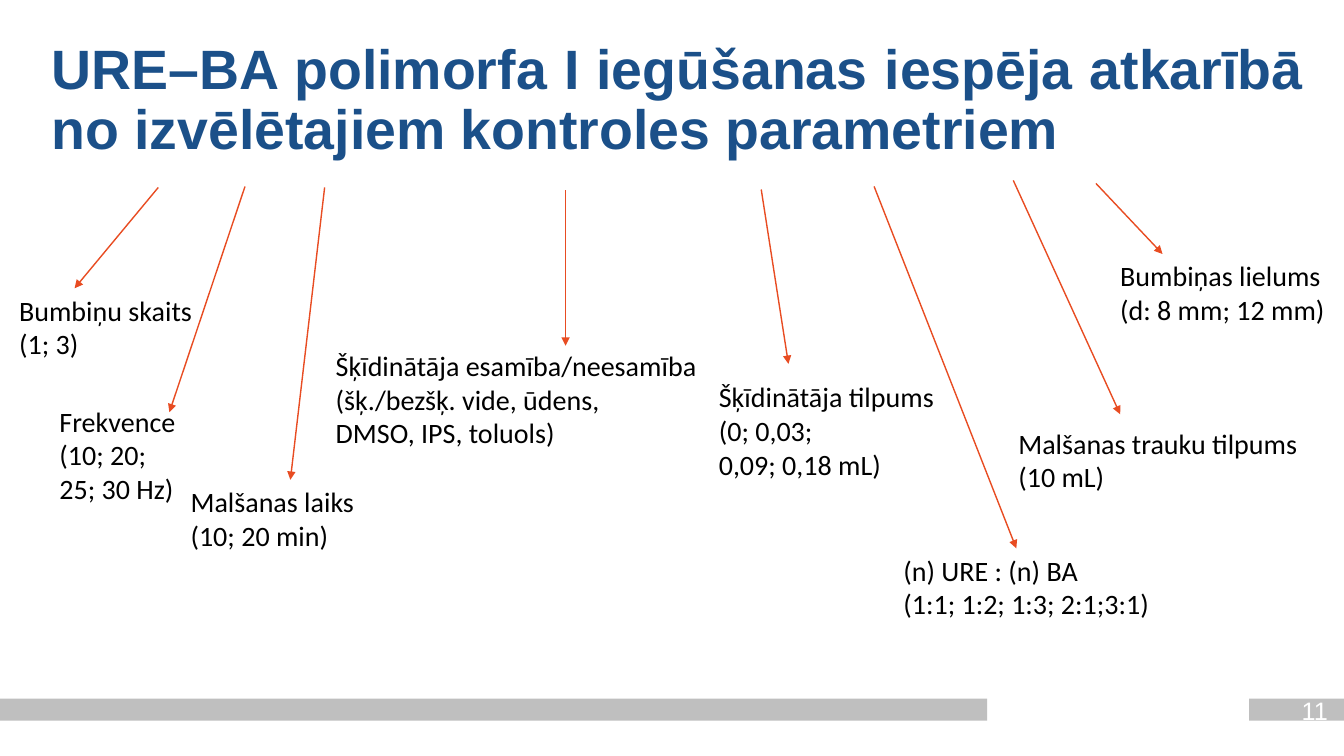
"""Build a slide of the parameters that control how polymorph I is obtained."""
from lxml import etree
from pptx import Presentation
from pptx.dml.color import RGBColor
from pptx.enum.shapes import MSO_CONNECTOR, MSO_SHAPE
from pptx.enum.text import MSO_ANCHOR, MSO_AUTO_SIZE, PP_ALIGN
from pptx.oxml.ns import qn
from pptx.util import Pt

EMU_PER_PX = 9144
STRAIGHT = MSO_CONNECTOR.STRAIGHT
RECTANGLE = MSO_SHAPE.RECTANGLE
MIDDLE = MSO_ANCHOR.MIDDLE
TOP = MSO_ANCHOR.TOP
GROW = MSO_AUTO_SIZE.SHAPE_TO_FIT_TEXT
LEFT = PP_ALIGN.LEFT
CENTER = PP_ALIGN.CENTER
JUSTIFY = PP_ALIGN.JUSTIFY

TITLE = "URE–BA polimorfa I iegūšanas iespēja atkarībā no izvēlētajiem kontroles parametriem"
BLUE, ORANGE, GRAY, BLACK, WHITE = "1B5089", "E84C22", "BFBFBF", "000000", "FFFFFF"

FOOTER_BARS = [(0, 979), (1239, 94)]

PARAMETERS = [
    ((14, 286, 184, 77), "Bumbiņu skaits\n(1; 3)", (157, 186), (74, 286)),
    ((54, 396, 127, 111), "Frekvence\n(10; 20;\n25; 30 Hz)", (243, 185), (168, 409)),
    ((184, 476, 175, 77), "Malšanas laiks\n(10; 20 min)", (322, 186), (288, 476)),
    ((328, 341, 372, 111),
     "Šķīdinātāja esamība/neesamība\n(šķ./bezšķ. vide, ūdens,\nDMSO, IPS, toluols)",
     (561, 189), (561, 343)),
    ((708, 372, 227, 111), "Šķīdinātāja tilpums\n(0; 0,03;\n0,09; 0,18 mL)",
     (755, 188), (782, 361)),
    ((891, 544, 258, 77), "(n) URE : (n) BA\n(1:1; 1:2; 1:3; 2:1;3:1)",
     (867, 185), (1008, 544)),
    ((1005, 418, 291, 77), "Malšanas trauku tilpums\n(10 mL)", (1005, 179), (1111, 411)),
    ((1106, 252, 215, 77), "Bumbiņas lielums\n(d: 8 mm; 12 mm)", (1087, 182), (1153, 252)),
]


def px(*lengths):
    """Turn pixel lengths into a list of EMU lengths."""
    return [length * EMU_PER_PX for length in lengths]


def color(hex_code):
    """Return the colour of a hex string."""
    return RGBColor.from_string(hex_code)


def write_text(shape, text, font_name, size, hex_code, bold=False,
               alignment=LEFT, anchor=TOP, wrap=False):
    """Fill a shape with text in one format."""
    frame = shape.text_frame
    frame.text = text
    frame.word_wrap = wrap
    frame.vertical_anchor = anchor
    inset = px(5)[0]
    frame.margin_left = frame.margin_right = inset
    frame.margin_top = frame.margin_bottom = inset
    for paragraph in frame.paragraphs:
        paragraph.alignment = alignment
        for run in paragraph.runs:
            run.font.name = font_name
            run.font.size = Pt(size)
            run.font.bold = bold
            run.font.color.rgb = color(hex_code)


def add_title(slide):
    """Place and format the title."""
    title = slide.shapes.title
    title.left, title.top, title.width, title.height = px(46, 57, 1252, 87)
    write_text(title, TITLE, "Arial", 39.6, BLUE, bold=True,
               alignment=JUSTIFY, anchor=MIDDLE, wrap=True)
    title.text_frame.paragraphs[0].line_spacing = 0.9


def add_bar(slide, left, width):
    """Draw one gray bar of the footer."""
    bar = slide.shapes.add_shape(RECTANGLE, *px(left, 693, width, 22))
    bar.shadow.inherit = False
    bar.fill.solid()
    bar.fill.fore_color.rgb = color(GRAY)
    bar.line.fill.background()


def add_label(slide, box, text, font_name="Calibri", size=20, hex_code=BLACK, alignment=LEFT):
    """Add a text box that grows with its text and does not wrap."""
    label = slide.shapes.add_textbox(*px(*box))
    write_text(label, text, font_name, size, hex_code, alignment=alignment)
    label.text_frame.auto_size = GROW


def add_arrow(slide, start, end):
    """Draw an orange arrow between two points."""
    arrow = slide.shapes.add_connector(STRAIGHT, *px(*start, *end))
    arrow.line.color.rgb = color(ORANGE)
    arrow.line.width = Pt(1)
    etree.SubElement(arrow.line._get_or_add_ln(), qn("a:tailEnd"), type="triangle")
    etree.SubElement(arrow._element.spPr, qn("a:effectLst"))


def main():
    """Build and save the slide."""
    presentation = Presentation()
    presentation.slide_width, presentation.slide_height = px(1333, 750)
    slide = presentation.slides.add_slide(presentation.slide_layouts[5])
    for left, width in FOOTER_BARS:
        add_bar(slide, left, width)
    add_title(slide)
    add_label(slide, (1282, 685, 44, 38), "11", "Arial", 18, WHITE, CENTER)
    for box, text, start, end in PARAMETERS:
        add_arrow(slide, start, end)
        add_label(slide, box, text)
    presentation.save("out.pptx")


if __name__ == "__main__":
    main()
